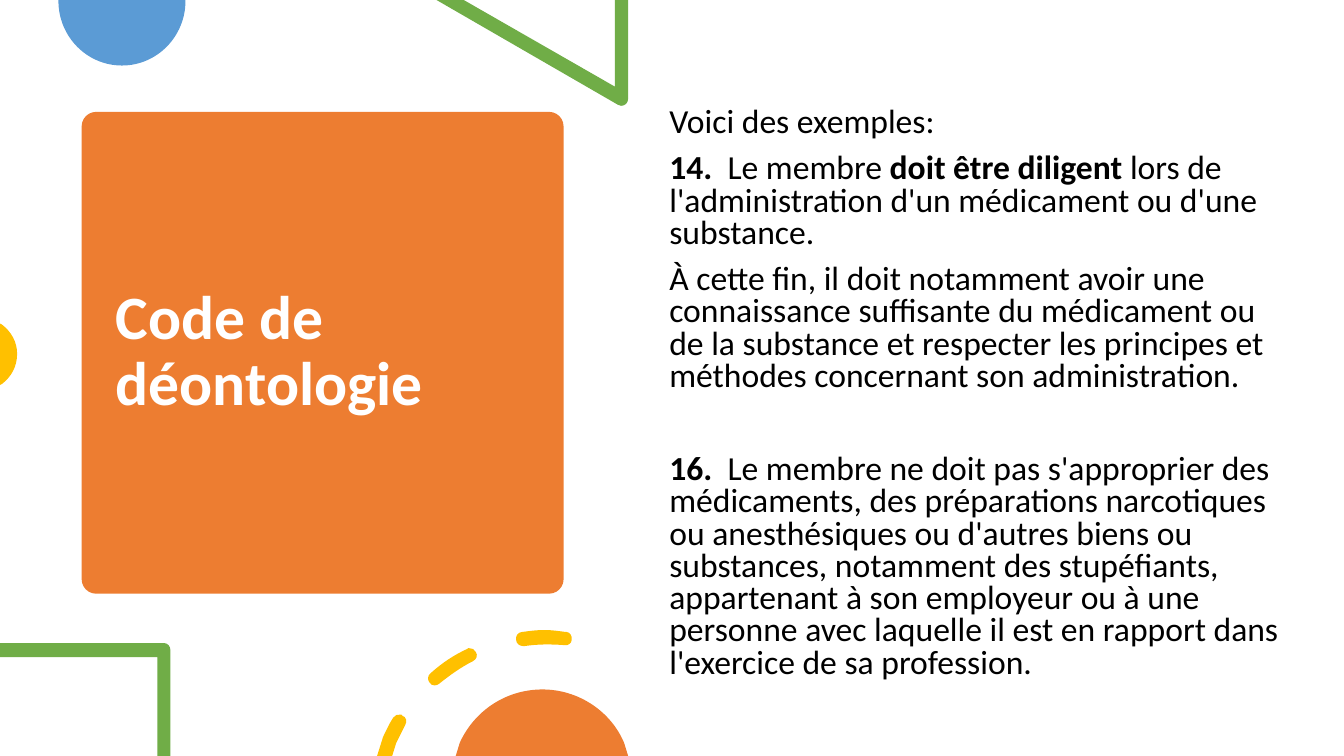
"""Build the slide on the code of ethics, with its decorative shapes."""
from dataclasses import dataclass

from pptx import Presentation
from pptx.dml.color import RGBColor
from pptx.enum.shapes import MSO_SHAPE
from pptx.enum.text import MSO_ANCHOR
from pptx.oxml.ns import qn
from pptx.util import Inches, Pt


@dataclass(frozen=True)
class Theme:
    orange: str = "ED7D31"
    blue: str = "5B9BD5"
    green: str = "70AD47"
    gold: str = "FFC000"
    white: str = "FFFFFF"
    black: str = "000000"
    font: str = "Calibri"
    title_size: int = 44
    body_size: int = 24


THEME = Theme()
CELL = Inches(0.01)
COLUMNS, ROWS = 1333, 750

TITLE = [([("Code de déontologie", True)], 0)]
BODY = [
    ([("Voici des exemples:", False)], 10),
    ([("14.", True), ("  Le membre ", False), ("doit être diligent ", True),
      ("lors de l'administration d'un médicament ou d'une substance.", False)], 10),
    ([("À cette fin, il doit notamment avoir une connaissance suffisante du "
       "médicament ou de la substance et respecter les principes et méthodes "
       "concernant son administration.", False)], 10),
    ([("16.", True),
      ("  Le membre ne doit pas s'approprier des médicaments, des préparations "
       "narcotiques ou anesthésiques ou d'autres biens ou substances, notamment "
       "des stupéfiants, appartenant à son employeur ou à une personne avec "
       "laquelle il est en rapport dans l'exercice de sa profession.", False)], 43.5),
]

CARD = (81, 111, 478, 478)
TITLE_AREA = (105, 122, 431, 456)
BODY_AREA = (654, 102, 628, 615)

BLUE_DISC = [[(184, 0), (58, 0), (58, 1), (58, 36, 86, 65, 121, 65),
              (156, 65, 184, 36, 184, 1)]]
GREEN_TRIANGLE = [[(623, 0), (610, 0), (610, 86), (460, 0), (433, 0), (613, 104),
                   (614, 105, 615, 105, 616, 105), (620, 105, 623, 102, 623, 98)]]
GOLD_DISC = [[(0, 321), (0, 382), (2, 381), (11, 374, 17, 364, 17, 351),
              (17, 339, 11, 329, 2, 322)]]
GREEN_SQUARE = [[(163, 638), (0, 638), (0, 652), (156, 652), (156, 750), (169, 750),
                 (169, 645), (169, 641, 166, 638, 163, 638)]]
GOLD_DASHES = [
    [(397, 709), (394, 708, 392, 710, 390, 712), (386, 718, 383, 725, 380, 731),
     (374, 750), (389, 750), (393, 737), (396, 731, 399, 725, 402, 719),
     (404, 716, 403, 711, 399, 710), (399, 709, 398, 709, 397, 709)],
    [(465, 643), (465, 643, 464, 643, 463, 644), (450, 650, 438, 658, 427, 668),
     (424, 670, 424, 675, 426, 677), (427, 679, 429, 680, 431, 680), (431, 680),
     (433, 680, 435, 679, 436, 678), (446, 670, 457, 662, 469, 656),
     (473, 654, 474, 650, 472, 647), (471, 644, 468, 643, 465, 643)],
    [(540, 625), (532, 625, 525, 626, 518, 627), (514, 627, 511, 631, 512, 635),
     (512, 638, 515, 641, 519, 641), (519, 641, 519, 641, 520, 641),
     (533, 639, 546, 639, 560, 640), (563, 641, 567, 638, 567, 635),
     (568, 631, 565, 627, 562, 627), (562, 627, 561, 627, 561, 627),
     (554, 626, 547, 625, 540, 625)],
]
ORANGE_DISC = [[(538, 684), (501, 684, 470, 706, 456, 737), (452, 750), (623, 750),
                (619, 737), (606, 706, 574, 684, 538, 684)]]


def paint(shape, color):
    shape.shadow.inherit = False
    shape.fill.solid()
    shape.fill.fore_color.rgb = RGBColor.from_string(color)
    shape.line.fill.background()


def bend(segment, controls, shape):
    """Turn a straight segment into a cubic curve with two control points."""
    segment.tag = qn("a:cubicBezTo")
    for index in (0, 1):
        x, y = (CELL * length for length in controls[2 * index:2 * index + 2])
        point = segment.makeelement(qn("a:pt"), {"x": str(x - shape.left),
                                                 "y": str(y - shape.top)})
        segment.insert(index, point)


def add_outline(page, contours, color):
    builder = page.shapes.build_freeform(*contours[0][0], scale=CELL)
    for index, (start, *steps) in enumerate(contours):
        if index:
            builder.move_to(*start)
        builder.add_line_segments([step[-2:] for step in steps], close=True)
    shape = builder.convert_to_shape()
    paint(shape, color)
    for outline in shape.element.xpath(".//a:path"):
        for name, total in (("w", shape.width), ("h", shape.height)):
            outline.set(name, str(total))
        for point in outline.iter(qn("a:pt")):
            for axis in ("x", "y"):
                point.set(axis, str(int(point.get(axis)) * CELL))
        segments = list(outline.iter(qn("a:lnTo")))
        steps = [step for contour in contours for step in contour[1:]]
        for segment, step in zip(segments, steps):
            if len(step) == 6:
                bend(segment, step[:4], shape)


def add_text(page, area, paragraphs, size, color, spacing, anchor):
    box = page.shapes.add_textbox(*(CELL * length for length in area))
    frame = box.text_frame
    frame.word_wrap = True
    frame.vertical_anchor = anchor
    for index, (spans, space_before) in enumerate(paragraphs):
        para = frame.add_paragraph() if index else frame.paragraphs[0]
        para.line_spacing = spacing
        para.space_before = Pt(space_before)
        for text, bold in spans:
            span = para.add_run()
            span.text = text
            span.font.name = THEME.font
            span.font.size = Pt(size)
            span.font.bold = bold
            span.font.color.rgb = RGBColor.from_string(color)


def main():
    deck = Presentation()
    deck.slide_width, deck.slide_height = CELL * COLUMNS, CELL * ROWS
    page = deck.slides.add_slide(deck.slide_layouts[6])

    card = page.shapes.add_shape(MSO_SHAPE.ROUNDED_RECTANGLE,
                                 *(CELL * length for length in CARD))
    card.adjustments[0] = 0.03
    paint(card, THEME.orange)
    add_text(page, TITLE_AREA, TITLE, THEME.title_size, THEME.white, 0.9,
             MSO_ANCHOR.MIDDLE)
    for contours, color in ((BLUE_DISC, THEME.blue), (GREEN_TRIANGLE, THEME.green),
                            (GOLD_DISC, THEME.gold), (GREEN_SQUARE, THEME.green),
                            (GOLD_DASHES, THEME.gold), (ORANGE_DISC, THEME.orange)):
        add_outline(page, contours, color)
    add_text(page, BODY_AREA, BODY, THEME.body_size, THEME.black, 0.8, MSO_ANCHOR.TOP)
    deck.save("out.pptx")


if __name__ == "__main__":
    main()
